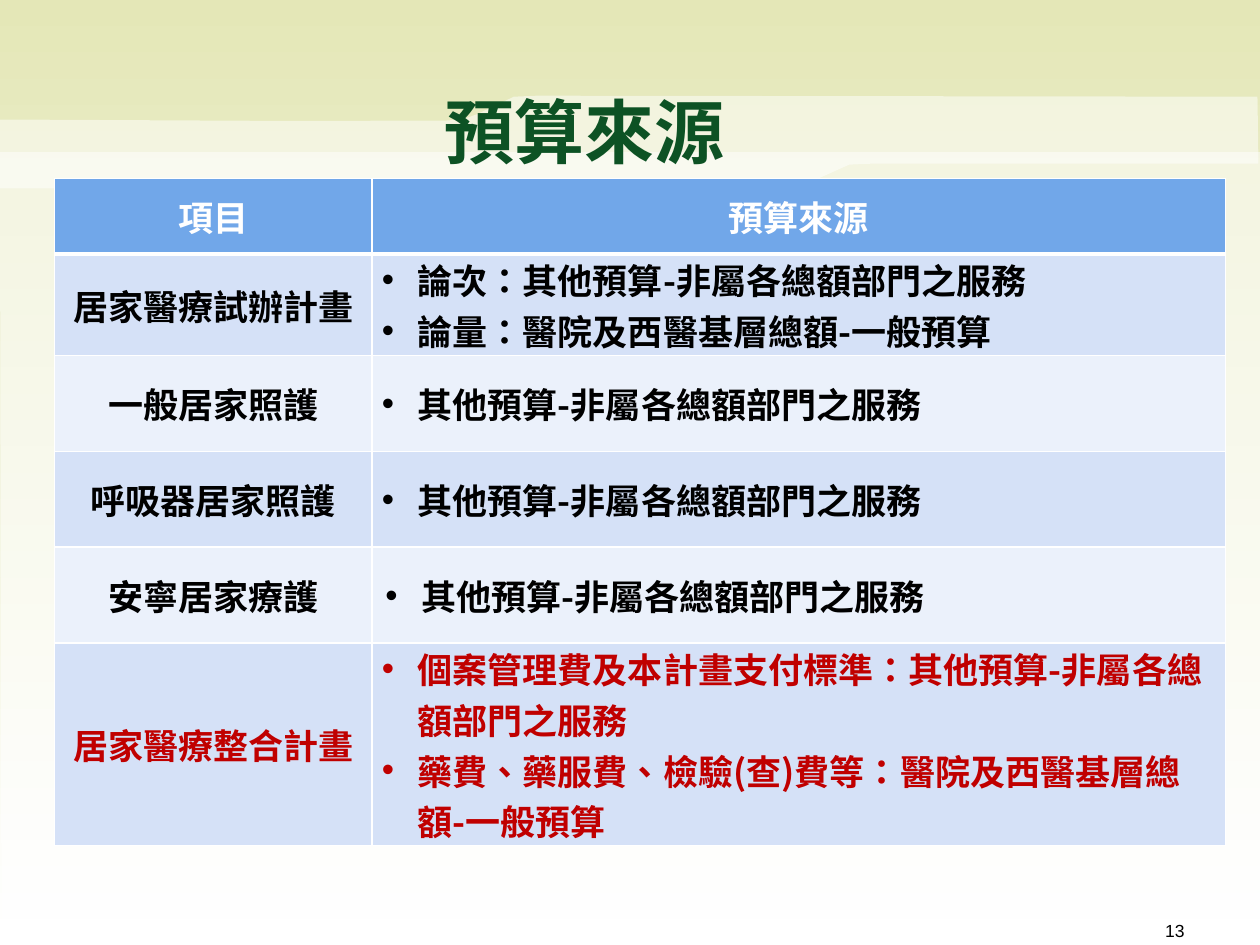
import lxml.etree
import pptx
import pptx.dml.color
import pptx.enum.text
import pptx.oxml.ns
import pptx.util
from pptx.dml.color import RGBColor
from pptx.enum.text import MSO_ANCHOR, PP_ALIGN
from pptx.util import Cm

WHITE = RGBColor(0xFF, 0xFF, 0xFF)
BLACK = RGBColor(0x00, 0x00, 0x00)
RED = RGBColor(0xC0, 0x00, 0x00)
TITLE_GREEN = RGBColor(0x0D, 0x52, 0x24)
BACKGROUND_GREEN = RGBColor(0xE4, 0xE7, 0xB7)
HEADER_BLUE = RGBColor(0x71, 0xA7, 0xE9)
BAND_BLUE = RGBColor(0xD5, 0xE1, 0xF7)
PALE_BLUE = RGBColor(0xEB, 0xF1, 0xFB)

TABLE_FONT = "Noto Sans CJK SC"
OTHER_BUDGET = "其他預算-非屬各總額部門之服務"
HEADINGS = ("項目", "預算來源")
PROGRAMS = [
    ("居家醫療試辦計畫", ["論次：" + OTHER_BUDGET, "論量：醫院及西醫基層總額-一般預算"]),
    ("一般居家照護", [OTHER_BUDGET]),
    ("呼吸器居家照護", [OTHER_BUDGET]),
    ("安寧居家療護", [OTHER_BUDGET]),
    ("居家醫療整合計畫", ["個案管理費及本計畫支付標準：" + OTHER_BUDGET,
                  "藥費、藥服費、檢驗(查)費等：醫院及西醫基層總額-一般預算"]),
]
COLUMN_WIDTHS = (Cm(6.4), Cm(17.2))
# The first program row is taller, to hold its two lines
ROW_HEIGHTS = [Cm(1.52), Cm(2.05)] + [Cm(1.93)] * 3 + [Cm(4.09)]

# Outlines in hundredths of a centimetre, relative to their own corner
PANEL_POINTS = [(0, 0), (2540, 0), (2547, 1598), (3, 1595)]
WAVE_POINTS = [(0, 51), (600, 54), (904, 53), (940, 48), (960, 41), (1036, 5),
               (1082, 3), (2535, 5), (2537, 140), (1758, 140), (1712, 142),
               (1621, 183), (1590, 190), (0, 190)]


def add_child(parent, tag, **attributes):
    return lxml.etree.SubElement(parent, pptx.oxml.ns.qn(tag), attributes)


def format_runs(paragraph, font_name, size, color, bold):
    for run in paragraph.runs:
        run.font.name = font_name
        run.font.size = pptx.util.Pt(size)
        run.font.bold = bold
        run.font.color.rgb = color
        # Traditional Chinese centres its punctuation
        run.font._element.set("lang", "zh-TW")
        add_child(run.font._element, "a:ea", typeface=font_name)


def add_veil(slide, left, top, points):
    """Half-transparent white area of the background."""
    builder = slide.shapes.build_freeform(*points[0], scale=Cm(0.01))
    builder.add_line_segments(points[1:], close=True)
    shape = builder.convert_to_shape(left, top)
    shape.shadow.inherit = False
    shape.line.fill.background()
    shape.fill.solid()
    shape.fill.fore_color.rgb = WHITE
    color = shape._element.spPr.find(".//" + pptx.oxml.ns.qn("a:srgbClr"))
    add_child(color, "a:alpha", val="50000")


def add_background(slide):
    fill = slide.background.fill
    fill.gradient()
    fill.gradient_angle = 270
    for stop, color in zip(fill.gradient_stops, (BACKGROUND_GREEN, WHITE)):
        stop.color.rgb = color
    add_veil(slide, Cm(0), Cm(3.07), PANEL_POINTS)
    add_veil(slide, Cm(0), Cm(1.9), WAVE_POINTS)


def add_text(slide, left, top, width, height, text, font_name, size, color,
             bold=False, alignment=PP_ALIGN.LEFT, anchor=MSO_ANCHOR.TOP):
    text_frame = slide.shapes.add_textbox(left, top, width, height).text_frame
    text_frame.word_wrap = True
    text_frame.vertical_anchor = anchor
    text_frame.text = text
    paragraph = text_frame.paragraphs[0]
    paragraph.alignment = alignment
    format_runs(paragraph, font_name, size, color, bold)


def add_bullet(paragraph):
    properties = paragraph._p.get_or_add_pPr()
    properties.set("marL", str(Cm(0.74)))
    properties.set("indent", str(-Cm(0.72)))
    add_child(properties, "a:buFont", typeface="Arial")
    add_child(properties, "a:buChar", char="•")


def set_borders(cell, top, bottom):
    properties = cell._tc.get_or_add_tcPr()
    widths = {"a:lnL": 1, "a:lnR": 1, "a:lnT": top, "a:lnB": bottom}
    for tag, width in widths.items():
        line = add_child(properties, tag, w=str(pptx.util.Pt(width)))
        add_child(add_child(line, "a:solidFill"), "a:srgbClr", val=str(WHITE))


def fill_cell(cell, lines, fill_color, color, bulleted=False, side=Cm(0.18), edge=0):
    cell.fill.solid()
    cell.fill.fore_color.rgb = fill_color
    cell.vertical_anchor = MSO_ANCHOR.MIDDLE
    cell.margin_left = cell.margin_right = side
    cell.margin_top = cell.margin_bottom = edge
    cell.text_frame.text = "\n".join(lines)
    for paragraph in cell.text_frame.paragraphs:
        if bulleted:
            add_bullet(paragraph)
        else:
            paragraph.alignment = PP_ALIGN.CENTER
        format_runs(paragraph, TABLE_FONT, 20, color, True)


def add_budget_table(slide, left, top):
    table = slide.shapes.add_table(
        len(ROW_HEIGHTS), len(COLUMN_WIDTHS), left, top,
        sum(COLUMN_WIDTHS), sum(ROW_HEIGHTS)).table
    table.first_row = table.horz_banding = False
    for column, width in zip(table.columns, COLUMN_WIDTHS):
        column.width = width
    for row, height in zip(table.rows, ROW_HEIGHTS):
        row.height = height

    # Borders go in before the fills, with a thick rule under the header
    for index, row in enumerate(table.rows):
        for cell in row.cells:
            set_borders(cell, 3 if index == 1 else 1, 3 if index == 0 else 1)

    # Header row
    for cell, heading in zip(table.rows[0].cells, HEADINGS):
        fill_cell(cell, [heading], HEADER_BLUE, WHITE, side=Cm(0.25), edge=Cm(0.13))

    # Program rows: the last one is highlighted
    for index, (program, sources) in enumerate(PROGRAMS, 1):
        fill_color = BAND_BLUE if index % 2 else PALE_BLUE
        color = RED if index == len(PROGRAMS) else BLACK
        side = Cm(0.25) if index == 4 else Cm(0.18)
        fill_cell(table.cell(index, 0), [program], fill_color, color)
        fill_cell(table.cell(index, 1), sources, fill_color, color, True, side)


def main():
    presentation = pptx.Presentation()
    presentation.slide_width = Cm(25.4)
    presentation.slide_height = Cm(19.05)
    slide = presentation.slides.add_slide(presentation.slide_layouts[6])
    add_background(slide)
    # Title
    add_text(slide, Cm(8.71), Cm(1.7), Cm(6.81), Cm(1.88), "預算來源", TABLE_FONT,
             40, TITLE_GREEN, bold=True, anchor=MSO_ANCHOR.MIDDLE)
    # Page number
    add_text(slide, Cm(18.21), Cm(18.42), Cm(5.92), Cm(0.46), "13", "Arial",
             10, BLACK, alignment=PP_ALIGN.RIGHT)
    add_budget_table(slide, Cm(1.1), Cm(3.6))
    presentation.save("out.pptx")


if __name__ == "__main__":
    main()
